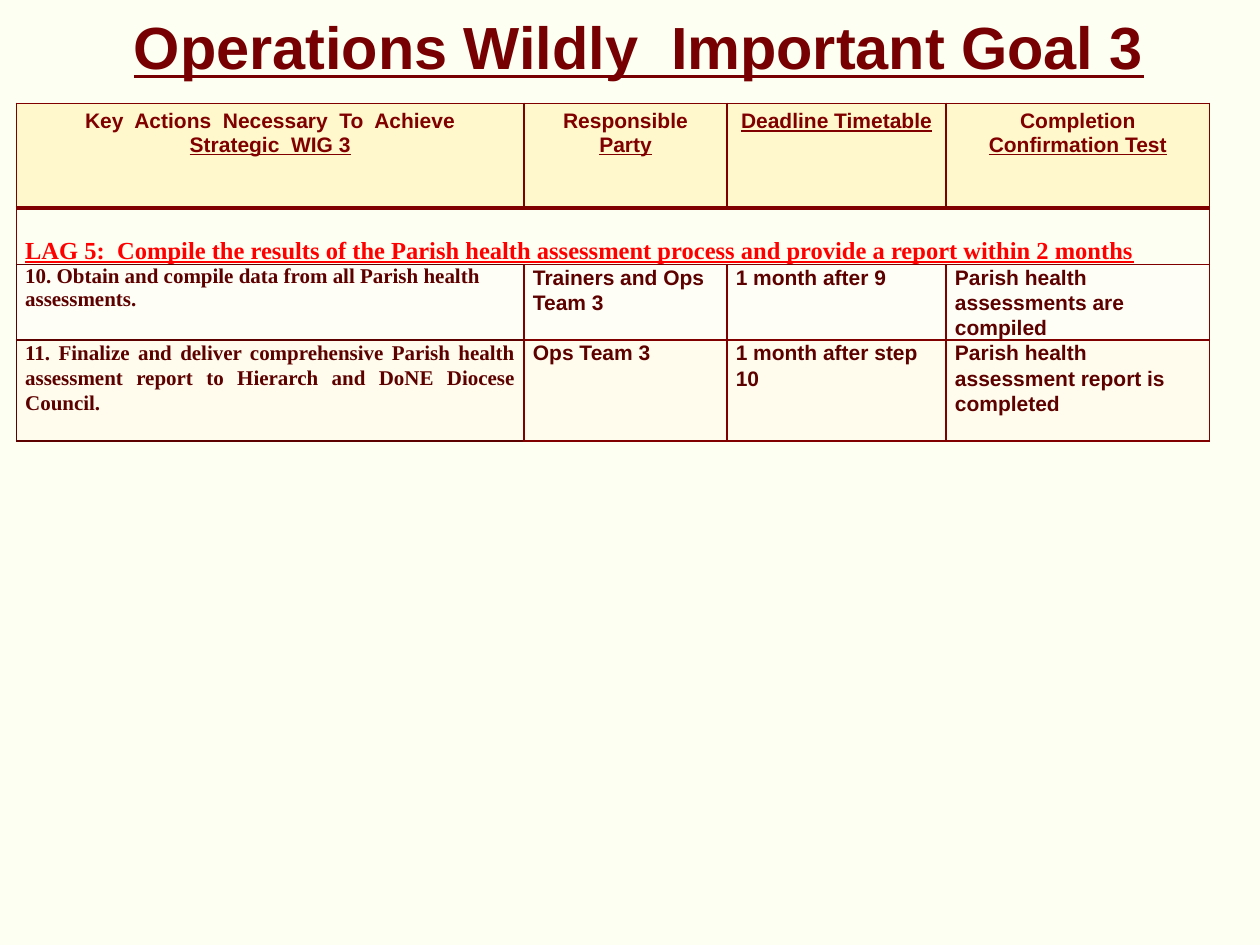
from dataclasses import dataclass
from pptx import Presentation
from pptx import util as u
from pptx.dml.color import RGBColor
from pptx.enum import text
from pptx.oxml import parse_xml
from pptx.oxml.ns import nsdecls


@dataclass(frozen=True)
class Theme:
    background: str = "FEFFF3"
    title: str = "760002"
    maroon: str = "800000"
    body: str = "5D0100"
    goal: str = "FF0000"
    header_fill: str = "FFF8CD"
    row_fills: tuple = ("FFFEF6", "FFFCED")
    sans: str = "Arial"
    serif: str = "Times New Roman"
    title_size: int = 34
    goal_size: int = 14
    text_size: int = 12


THEME = Theme()
CENTER, JUSTIFY = text.PP_ALIGN.CENTER, text.PP_ALIGN.JUSTIFY
COLUMNS = (4.03, 1.61, 1.74, 2.09)
ROWS = (0.83, 0.45, 0.6, 0.8)

# Each header is a list of paragraphs; each paragraph holds (text, underlined) runs
HEADERS = (
    [[("Key  Actions  Necessary  To  Achieve", False)], [("Strategic  WIG 3", True)]],
    [[("Responsible ", False), ("Party", True)]],
    [[("Deadline Timetable", True)]],
    [[("Completion", False)], [("Confirmation Test", True)]],
)
GOAL = ("LAG 5:  Compile the results of the Parish health assessment process "
        "and provide a report within 2 months")
ACTIONS = (
    ("10. Obtain and compile data from all Parish health assessments.",
     "Trainers and Ops Team 3", "1 month after 9",
     "Parish health assessments are compiled"),
    ("11. Finalize and deliver comprehensive Parish health assessment report "
     "to Hierarch and DoNE Diocese Council.",
     "Ops Team 3", "1 month after step 10",
     "Parish health assessment report is completed"),
)


def apply(target, values):
    for name, value in values.items():
        setattr(target, name, value)


def write(frame, paragraphs, name, size, color, **layout):
    """Fill a text frame with paragraphs made of (text, underlined) runs."""
    for index, runs in enumerate(paragraphs):
        paragraph = frame.add_paragraph() if index else frame.paragraphs[0]
        apply(paragraph, layout)
        for words, underlined in runs:
            run = paragraph.add_run()
            run.text = words
            apply(run.font, dict(name=name, size=u.Pt(size), bold=True,
                                 underline=underlined))
            run.font.color.rgb = RGBColor.from_string(color)


def style_cell(cell, fill, line, bottom_width=1):
    """Set the borders first, then the fill, as the schema orders them."""
    properties = cell._tc.get_or_add_tcPr()
    for side in "LRTB":
        width = u.Pt(bottom_width if side == "B" else 1)
        properties.append(parse_xml(
            f'<a:ln{side} {nsdecls("a")} w="{width}"><a:solidFill>'
            f'<a:srgbClr val="{line}"/></a:solidFill></a:ln{side}>'))
    if fill:
        cell.fill.solid()
        cell.fill.fore_color.rgb = RGBColor.from_string(fill)
    else:
        cell.fill.background()


def set_body_margins(cell):
    apply(cell, dict(margin_left=u.Inches(0.07), margin_right=u.Inches(0.07),
                     margin_top=0, margin_bottom=0))


def place_title(slide, left, top, width, height):
    title = slide.shapes.title
    apply(title, dict(left=left, top=top, width=width, height=height))
    apply(title.text_frame, dict(word_wrap=True, auto_size=text.MSO_AUTO_SIZE.NONE,
                                 vertical_anchor=text.MSO_ANCHOR.MIDDLE))
    write(title.text_frame, [[("Operations Wildly  Important Goal 3", True)]],
          THEME.sans, THEME.title_size, THEME.title,
          alignment=CENTER, line_spacing=0.7)


def place_table(slide, left, top, width, height):
    table = slide.shapes.add_table(len(ROWS), len(COLUMNS),
                                   left, top, width, height).table
    for column, size in zip(table.columns, COLUMNS):
        column.width = u.Inches(size)
    for row, size in zip(table.rows, ROWS):
        row.height = u.Inches(size)

    # Header row
    for column, paragraphs in enumerate(HEADERS):
        cell = table.cell(0, column)
        style_cell(cell, THEME.header_fill, THEME.maroon, bottom_width=3)
        write(cell.text_frame, paragraphs, THEME.sans, THEME.text_size,
              THEME.maroon, alignment=CENTER)

    # Goal row across all columns
    goal = table.cell(1, 0)
    goal.merge(table.cell(1, len(COLUMNS) - 1))
    style_cell(goal, None, THEME.maroon)
    set_body_margins(goal)
    goal.vertical_anchor = text.MSO_ANCHOR.BOTTOM
    write(goal.text_frame, [[(GOAL, True)]], THEME.serif, THEME.goal_size,
          THEME.goal, line_spacing=1.07)

    # Action rows
    action_layouts = (dict(), dict(alignment=JUSTIFY, line_spacing=1.07))
    rows = zip(ACTIONS, THEME.row_fills, action_layouts)
    for row, (action, fill, action_layout) in enumerate(rows, start=2):
        for column, words in enumerate(action):
            cell = table.cell(row, column)
            first = column == 0
            style_cell(cell, fill, THEME.body if first else THEME.maroon)
            set_body_margins(cell)
            write(cell.text_frame, [[(words, False)]],
                  THEME.serif if first else THEME.sans, THEME.text_size, THEME.body,
                  **(action_layout if first else dict(line_spacing=1.07)))


def main():
    presentation = Presentation()
    apply(presentation, dict(slide_width=u.Inches(10), slide_height=u.Inches(7.5)))
    slide = presentation.slides.add_slide(presentation.slide_layouts[5])
    slide.background.fill.solid()
    slide.background.fill.fore_color.rgb = RGBColor.from_string(THEME.background)
    place_table(slide, u.Inches(0.13), u.Inches(0.82),
                u.Inches(sum(COLUMNS)), u.Inches(sum(ROWS)))
    place_title(slide, u.Inches(0.84), u.Inches(-0.19), u.Inches(8.46), u.Inches(1.25))
    presentation.save("out.pptx")


if __name__ == "__main__":
    main()
